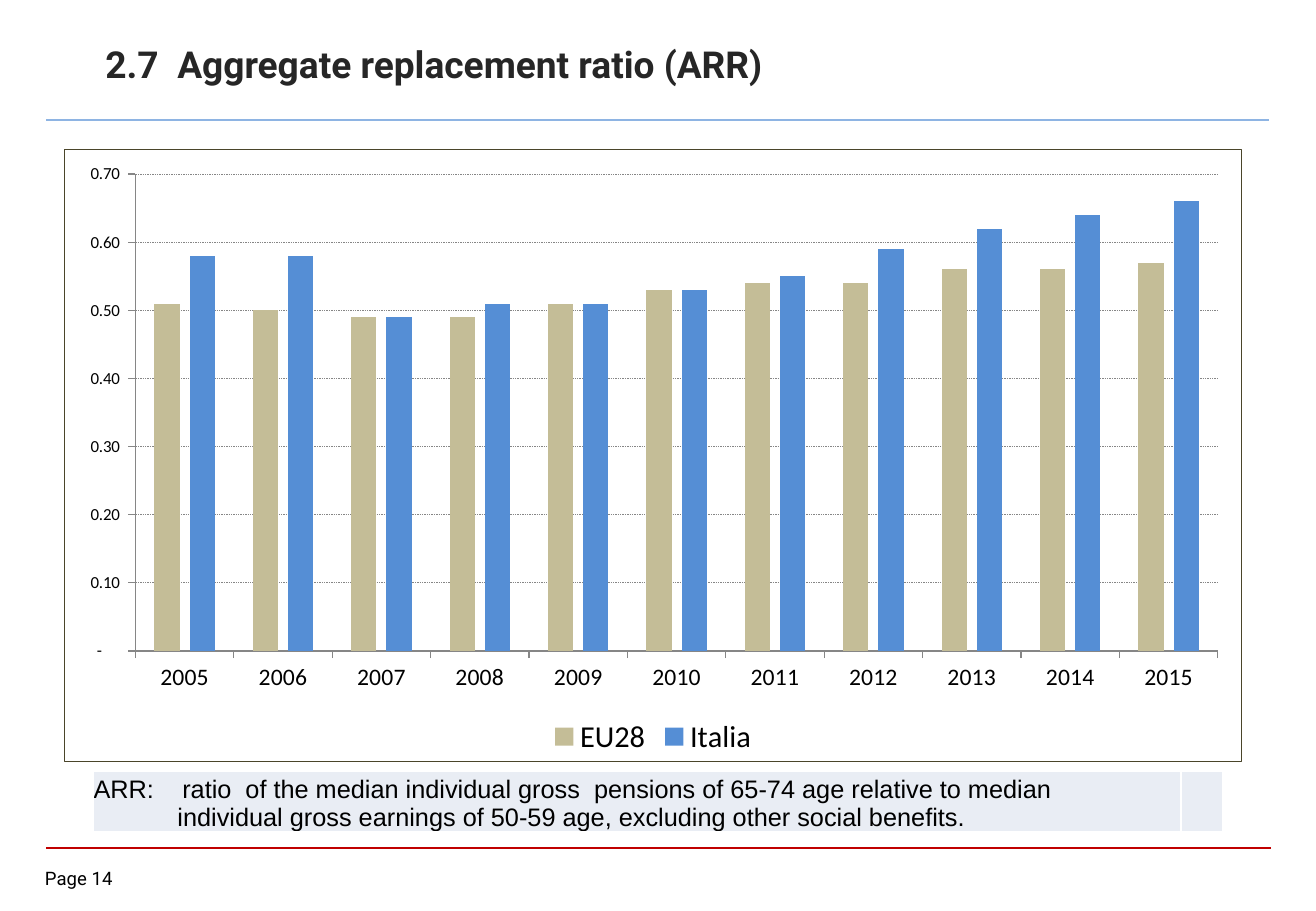
from lxml.etree import SubElement
from pptx import Presentation
from pptx.chart.data import CategoryChartData
from pptx.dml.color import RGBColor
from pptx.enum.chart import XL_CHART_TYPE, XL_LEGEND_POSITION, XL_TICK_MARK
from pptx.enum.dml import MSO_LINE
from pptx.enum.shapes import MSO_CONNECTOR
from pptx.enum.text import MSO_ANCHOR
from pptx.oxml import parse_xml
from pptx.oxml.ns import nsdecls, qn
from pptx.util import Pt

SCALE = 9144
YEARS = [str(year) for year in range(2005, 2016)]
SERIES = [
    ("EU28", "C4BD97", [0.51, 0.5, 0.49, 0.49, 0.51, 0.53, 0.54, 0.54, 0.56, 0.56, 0.57]),
    ("Italia", "558ED5", [0.58, 0.58, 0.49, 0.51, 0.51, 0.53, 0.55, 0.59, 0.62, 0.64, 0.66]),
]
FORMAT = '_(* #,##0.00_);_(* \\(#,##0.00\\);_(* "-"??_);_(@_)'
NOTE = [
    "ARR:\tratio  of the median individual gross  pensions of 65-74 age relative to median",
    "individual gross earnings of 50-59 age, excluding other social benefits.",
]


def px(*sizes):
    return [size * SCALE for size in sizes]


def color(code):
    return RGBColor.from_string(code)


class Page:
    black = "000000"
    axis = "868686"
    head = "Roboto"
    body = "Arial"
    label = "Calibri"

    def __init__(self, deck):
        self.slide = deck.slides.add_slide(deck.slide_layouts[6])
        self.shapes = self.slide.shapes

    def style(self, font, name, size, code, bold=False):
        font.name, font.size, font.bold = name, Pt(size), bold
        font.color.rgb = color(code)

    def stroke(self, line, code, width):
        line.color.rgb = color(code)
        line.width = Pt(width)

    def rule(self, left, right, top, code, width):
        line = self.shapes.add_connector(MSO_CONNECTOR.STRAIGHT, *px(left, top, right, top))
        self.stroke(line.line, code, width)
        SubElement(line._element.spPr, qn("a:effectLst"))

    def text(self, box, words, size, code, bold=False, inset=(0, 0)):
        frame = self.shapes.add_textbox(*px(*box)).text_frame
        frame.word_wrap = True
        frame.margin_left, frame.margin_top = px(*inset)
        frame.margin_right, frame.margin_bottom = px(*inset)
        para = frame.paragraphs[0]
        para.text = words
        self.style(para.font, self.head, size, code, bold)

    def chart(self, box):
        data = CategoryChartData(number_format="0.00")
        data.categories = YEARS
        for name, _, values in SERIES:
            data.add_series(name, values)
        chart = self.shapes.add_chart(XL_CHART_TYPE.COLUMN_CLUSTERED, *px(*box), data).chart
        self.style(chart.font, self.label, 10, self.black)
        chart.has_title = False
        chart.has_legend = True
        chart.legend.position = XL_LEGEND_POSITION.BOTTOM
        chart.legend.include_in_layout = False
        self.style(chart.legend.font, self.label, 18, self.black)
        plot = chart.plots[0]
        plot.gap_width, plot.overlap, plot.vary_by_categories = 150, -40, False
        for series, (_, code, _) in zip(plot.series, SERIES):
            series.format.fill.solid()
            series.format.fill.fore_color.rgb = color(code)
            series.invert_if_negative = False
        for axis, size in ((chart.category_axis, 14), (chart.value_axis, 10)):
            axis.major_tick_mark = XL_TICK_MARK.OUTSIDE
            axis.minor_tick_mark = XL_TICK_MARK.NONE
            self.stroke(axis.format.line, self.axis, 0.75)
            self.style(axis.tick_labels.font, self.label, size, self.black)
        scale = chart.value_axis
        scale.minimum_scale, scale.maximum_scale, scale.major_unit = 0, 0.7, 0.1
        scale.tick_labels.number_format = FORMAT
        scale.tick_labels.number_format_is_linked = False
        scale.has_major_gridlines = True
        grid = scale.major_gridlines.format.line
        self.stroke(grid, self.axis, 0.5)
        grid.dash_style = MSO_LINE.ROUND_DOT
        self.place(chart, x=0.06, y=0.04, w=0.92, h=0.78)
        self.frame(chart, "4A452A", 0.5)

    def place(self, chart, **parts):
        area = chart._chartSpace.chart.plotArea
        for old in area.findall(qn("c:layout")):
            area.remove(old)
        spots = "".join(f'<c:{key} val="{value}"/>' for key, value in parts.items())
        area.insert(0, parse_xml(
            f'<c:layout {nsdecls("c")}><c:manualLayout><c:layoutTarget val="inner"/>'
            f'<c:xMode val="edge"/><c:yMode val="edge"/>{spots}</c:manualLayout></c:layout>'))

    def frame(self, chart, code, width):
        chart._chartSpace.chart.addnext(parse_xml(
            f'<c:spPr {nsdecls("c", "a")}><a:solidFill><a:srgbClr val="FFFFFF"/></a:solidFill>'
            f'<a:ln w="{Pt(width)}"><a:solidFill><a:srgbClr val="{code}"/></a:solidFill></a:ln>'
            '</c:spPr>'))

    def border(self, cell, code, width):
        props = cell._tc.get_or_add_tcPr()
        for spot, side in enumerate("LRTB"):
            props.insert(spot, parse_xml(
                f'<a:ln{side} {nsdecls("a")} w="{Pt(width)}"><a:solidFill>'
                f'<a:srgbClr val="{code}"/></a:solidFill></a:ln{side}>'))

    def table(self, box, widths, lines, indent, tab):
        table = self.shapes.add_table(1, len(widths), *px(*box)).table
        table.first_row = table.horz_banding = False
        for column, width in zip(table.columns, px(*widths)):
            column.width = width
        for cell in table.iter_cells():
            cell.fill.solid()
            cell.fill.fore_color.rgb = color("E9EDF4")
            cell.margin_left = cell.margin_right = 0
            cell.margin_top = cell.margin_bottom = 0
            cell.vertical_anchor = MSO_ANCHOR.BOTTOM
            self.border(cell, "FFFFFF", 1)
        frame = table.cell(0, 0).text_frame
        frame.text = "\n".join(lines)
        first, second = frame.paragraphs
        tabs = SubElement(first._p.get_or_add_pPr(), qn("a:tabLst"))
        SubElement(tabs, qn("a:tab"), pos=str(tab * SCALE), algn="l")
        second._p.get_or_add_pPr().set("marL", str(indent * SCALE))
        for para in frame.paragraphs:
            self.style(para.font, self.body, 15, self.black)


def main():
    deck = Presentation()
    deck.slide_width, deck.slide_height = px(1083, 750)
    page = Page(deck)
    page.rule(38, 1046, 698, "C00000", 1)
    page.rule(38, 1044, 99, "8EB4E3", 1.5)
    page.text((37, 714, 73, 22), "Page 14", 11, page.black)
    page.text((77, 29, 780, 63), "2.7  Aggregate replacement ratio (ARR)", 22, "262626", True, (10, 5))
    page.chart((53, 123, 969, 504))
    page.table((77, 635, 929, 39), (895, 34), NOTE, 69, 73)
    deck.save("out.pptx")


if __name__ == "__main__":
    main()
